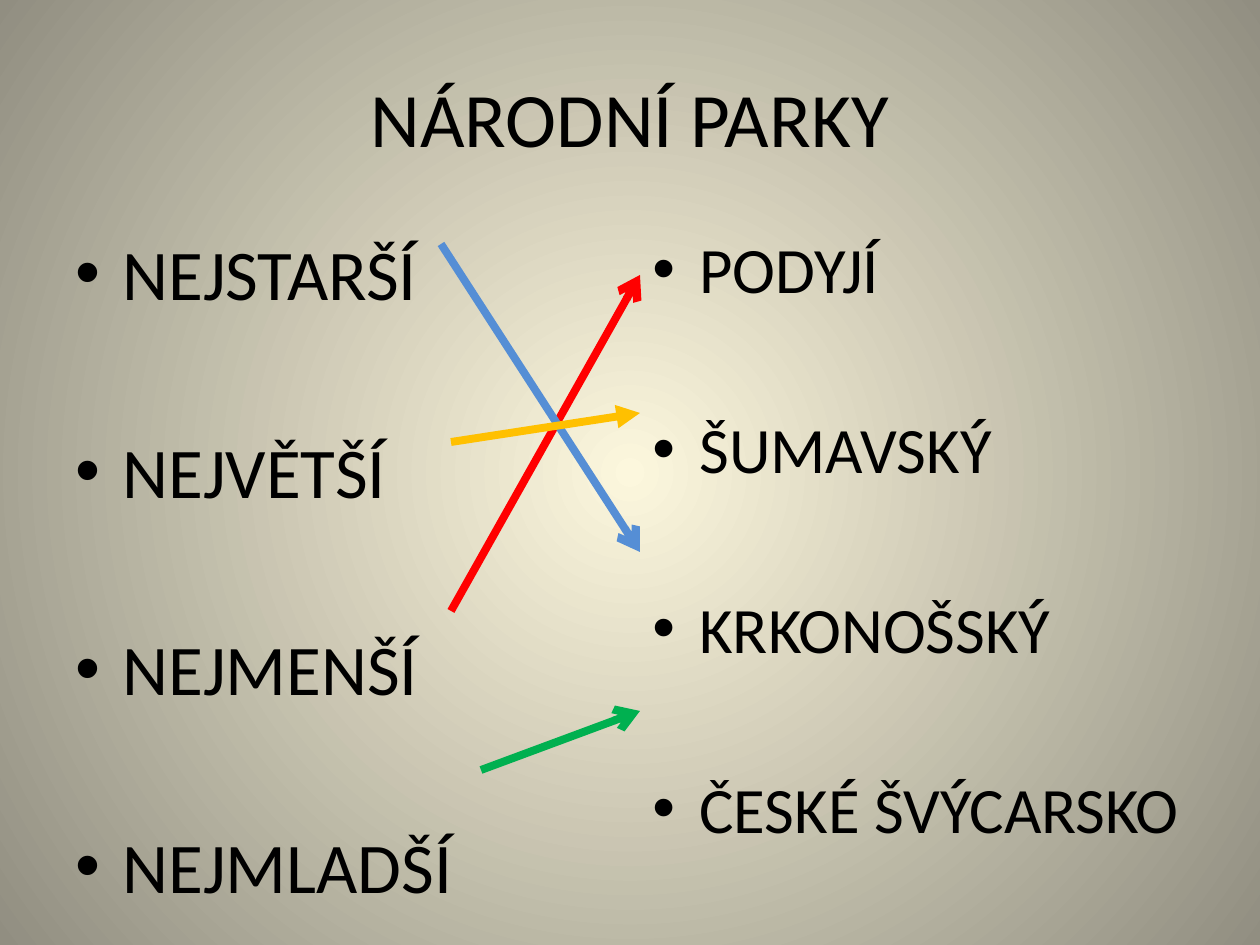
import pptx
import pptx.dml.color
import pptx.enum.shapes
import pptx.enum.text
import pptx.oxml
import pptx.oxml.ns
import pptx.util
from lxml import etree

PX_PER_INCH = 126
FONT = "Calibri"
BLACK = "000000"
A_NS = 'xmlns:a="http://schemas.openxmlformats.org/drawingml/2006/main"'
qn = pptx.oxml.ns.qn


def px(length):
    return pptx.util.Emu(round(length * 914400 / PX_PER_INCH))


def color(hex_value):
    return pptx.dml.color.RGBColor.from_string(hex_value)


def style(paragraph, size):
    paragraph.font.name = FONT
    paragraph.font.size = pptx.util.Pt(size)
    paragraph.font.color.rgb = color(BLACK)


def paint_background(slide, center, edge):
    """Circular gradient spreading from the middle of the slide."""
    slide.background.fill.gradient()
    gradient = next(slide.background._cSld.iter(qn("a:gradFill")))
    gradient.getparent().replace(gradient, pptx.oxml.parse_xml(
        f'<a:gradFill {A_NS} rotWithShape="1"><a:gsLst>'
        f'<a:gs pos="0"><a:srgbClr val="{center}"/></a:gs>'
        f'<a:gs pos="100000"><a:srgbClr val="{edge}"/></a:gs></a:gsLst>'
        '<a:path path="circle">'
        '<a:fillToRect l="50000" t="50000" r="50000" b="50000"/>'
        '</a:path></a:gradFill>'))


def add_heading(slide, box, text):
    frame = slide.shapes.add_textbox(*map(px, box)).text_frame
    frame.word_wrap = True
    frame.vertical_anchor = pptx.enum.text.MSO_ANCHOR.MIDDLE
    heading = frame.paragraphs[0]
    heading.text = text
    heading.alignment = pptx.enum.text.PP_ALIGN.CENTER
    style(heading, 44)


def add_bullet_column(slide, box, items, size, gap):
    """Bulleted list whose items are set apart by gap points."""
    frame = slide.shapes.add_textbox(*map(px, box)).text_frame
    frame.word_wrap = True
    frame.margin_top = px(9)
    for index, item in enumerate(items):
        entry = frame.paragraphs[0] if index == 0 else frame.add_paragraph()
        entry.text = item
        properties = entry._p.get_or_add_pPr()
        properties.set("marL", str(px(47)))
        properties.set("indent", str(-px(47)))
        etree.SubElement(properties, qn("a:buFont"), typeface="Arial")
        etree.SubElement(properties, qn("a:buChar"), char="•")
        if index:
            entry.space_before = pptx.util.Pt(gap)
        style(entry, size)


def add_answer_arrow(slide, start, end, hex_value, head):
    arrow = slide.shapes.add_connector(
        pptx.enum.shapes.MSO_CONNECTOR.STRAIGHT, *map(px, start + end))
    arrow.line.color.rgb = color(hex_value)
    arrow.line.width = pptx.util.Pt(4.5)
    etree.SubElement(arrow.line._get_or_add_ln(), qn("a:tailEnd"), type=head)
    etree.SubElement(arrow._element.spPr, qn("a:effectLst"))


def build_matching_slide(presentation):
    slide = presentation.slides.add_slide(presentation.slide_layouts[6])
    paint_background(slide, "FCF7DD", "918E81")
    add_heading(slide, (63, 38, 1134, 157), "NÁRODNÍ PARKY")

    # Descriptions on the left, parks on the right
    column_top, column_width, column_height = 220, 557, 624
    parks_left = 640
    add_bullet_column(slide, (63, column_top, column_width, column_height),
                      ["NEJSTARŠÍ", "NEJVĚTŠÍ", "NEJMENŠÍ", "NEJMLADŠÍ"],
                      40.7, 64.2)
    add_bullet_column(slide,
                      (parks_left, column_top, column_width, column_height),
                      ["PODYJÍ", "ŠUMAVSKÝ", "KRKONOŠSKÝ", "ČESKÉ ŠVÝCARSKO"],
                      37, 58.4)

    # Arrows from each description to its park
    for start, end_y, hex_value, head in [
        ((451, 611), 275, "FF0000", "arrow"),
        ((441, 244), 552, "558ED5", "arrow"),
        ((451, 442), 413, "FFC000", "triangle"),
        ((481, 770), 711, "00B050", "arrow"),
    ]:
        add_answer_arrow(slide, start, (parks_left, end_y), hex_value, head)


def main():
    presentation = pptx.Presentation()
    presentation.slide_width = px(1260)
    presentation.slide_height = px(945)
    build_matching_slide(presentation)
    presentation.save("out.pptx")


if __name__ == "__main__":
    main()
